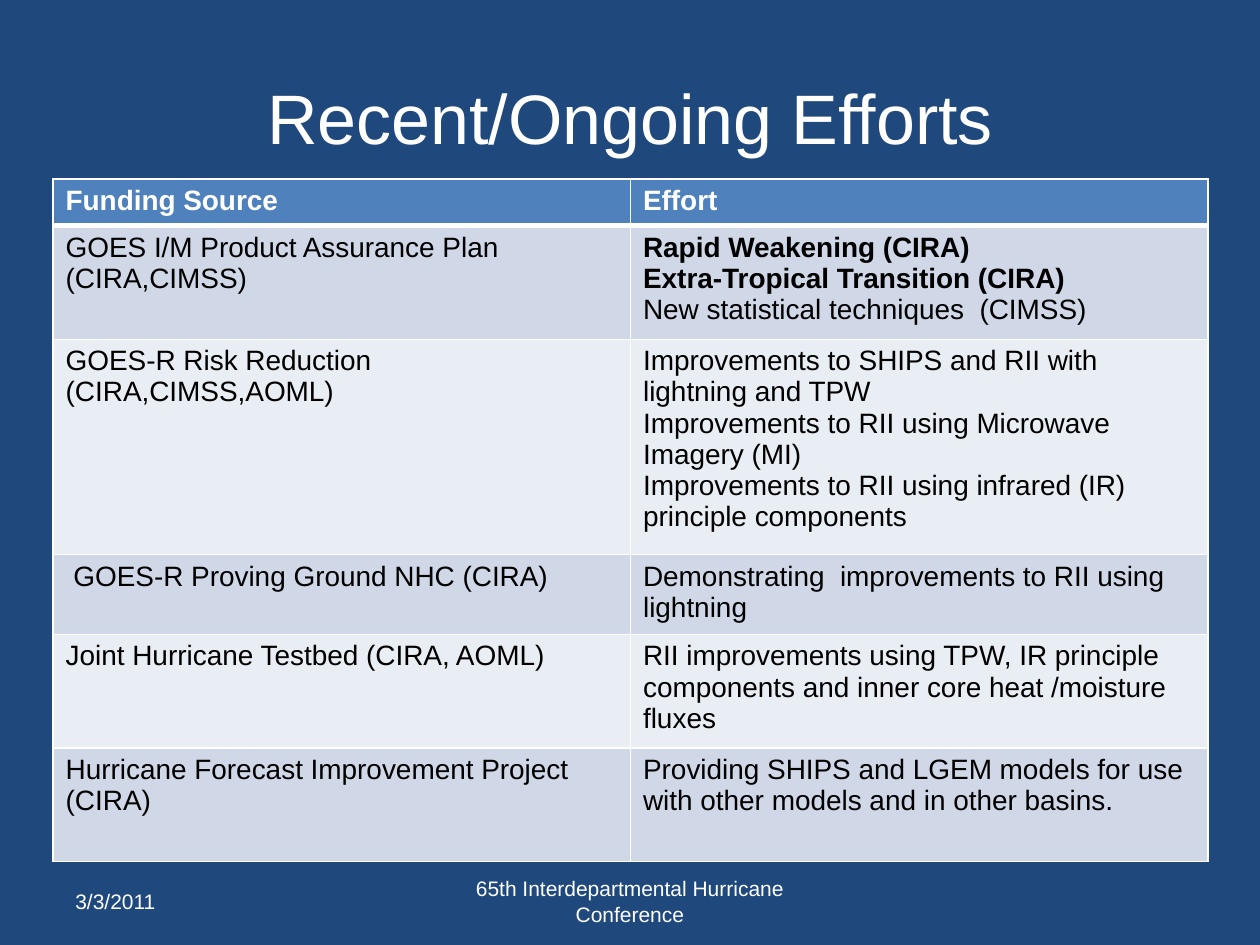
from dataclasses import dataclass

from lxml.etree import SubElement
from pptx import Presentation
from pptx.dml.color import RGBColor as RGB
from pptx.enum.text import MSO_ANCHOR as ANCHOR, PP_ALIGN as ALIGN
from pptx.oxml.ns import qn
from pptx.util import Cm, Pt


@dataclass(frozen=True)
class Theme:
    font: str = "Arial"
    background: str = "1F497D"
    light: str = "FFFFFF"
    dark: str = "000000"
    header: str = "4F81BD"
    bands: tuple = ("D0D8E8", "E9EDF4")
    title_size: int = 40
    table_size: int = 16
    footer_size: int = 12
    border: int = 1
    header_border: int = 3


THEME = Theme()

HEADINGS = ("Funding Source", "Effort")
# Row height in cm, funding source, and efforts as (text, bold)
EFFORTS = [
    (2.29, "GOES I/M Product Assurance Plan (CIRA,CIMSS)", [
        ("Rapid Weakening (CIRA)", True),
        ("Extra-Tropical Transition (CIRA)", True),
        ("New statistical techniques  (CIMSS)", False)]),
    (4.34, "GOES-R Risk Reduction (CIRA,CIMSS,AOML)", [
        ("Improvements to SHIPS and RII with lightning and TPW", False),
        ("Improvements to RII using Microwave Imagery (MI)", False),
        ("Improvements to RII using infrared (IR) principle components", False)]),
    (1.6, " GOES-R Proving Ground NHC (CIRA)", [
        ("Demonstrating  improvements to RII using lightning", False)]),
    (2.29, "Joint Hurricane Testbed (CIRA, AOML)", [
        ("RII improvements using TPW, IR principle components and inner core "
         "heat /moisture fluxes", False)]),
    (2.29, "Hurricane Forecast Improvement Project (CIRA)", [
        ("Providing SHIPS and LGEM models for use with other models and in "
         "other basins.", False)]),
]
HEADER_HEIGHT = 0.94
COLUMN_WIDTH = 11.64


def add_run(p, text, size, color, bold=False):
    r = p.add_run()
    r.text = text
    formats = {"name": THEME.font, "size": Pt(size), "bold": bold}
    for name, value in formats.items():
        setattr(r.font, name, value)
    r.font.color.rgb = RGB.from_string(color)


def add_label(slide, box, text, size, align=ALIGN.LEFT):
    sp = slide.shapes.add_textbox(*(Cm(v) for v in box))
    tf = sp.text_frame
    formats = {"word_wrap": True, "vertical_anchor": ANCHOR.MIDDLE}
    for name, value in formats.items():
        setattr(tf, name, value)
    p = tf.paragraphs[0]
    p.alignment = align
    add_run(p, text, size, THEME.light)


def set_borders(cell, top, bottom):
    """Draw all four edges; the line elements must come before the fill."""
    tcPr = cell._tc.get_or_add_tcPr()
    widths = {"a:lnL": THEME.border, "a:lnR": THEME.border,
              "a:lnT": top, "a:lnB": bottom}
    for tag, width in widths.items():
        ln = SubElement(tcPr, qn(tag), w=str(Pt(width)))
        fill = SubElement(ln, qn("a:solidFill"))
        SubElement(fill, qn("a:srgbClr"), val=THEME.light)


def fill_cell(cell, lines, color, background, top=THEME.border, bottom=THEME.border):
    set_borders(cell, top, bottom)
    cell.fill.solid()
    cell.fill.fore_color.rgb = RGB.from_string(background)
    tf = cell.text_frame
    for i, (text, bold) in enumerate(lines):
        p = tf.add_paragraph() if i else tf.paragraphs[0]
        add_run(p, text, THEME.table_size, color, bold)


def add_efforts_table(slide, left, top):
    heights = [HEADER_HEIGHT] + [height for height, _, _ in EFFORTS]
    table = slide.shapes.add_table(
        len(heights), len(HEADINGS), Cm(left), Cm(top),
        Cm(COLUMN_WIDTH * len(HEADINGS)), Cm(sum(heights))).table
    for column in table.columns:
        column.width = Cm(COLUMN_WIDTH)
    for row, height in zip(table.rows, heights):
        row.height = Cm(height)

    for col, heading in enumerate(HEADINGS):
        fill_cell(table.cell(0, col), [(heading, True)], THEME.light,
                  THEME.header, bottom=THEME.header_border)
    for row, (_, source, efforts) in enumerate(EFFORTS, start=1):
        band = THEME.bands[(row - 1) % 2]
        edge = THEME.header_border if row == 1 else THEME.border
        for col, lines in enumerate(([(source, False)], efforts)):
            fill_cell(table.cell(row, col), lines, THEME.dark, band, top=edge)


def main():
    prs = Presentation()
    prs.slide_width, prs.slide_height = Cm(25.4), Cm(19.05)
    slide = prs.slides.add_slide(prs.slide_layouts[6])
    fill = slide.background.fill
    fill.solid()
    fill.fore_color.rgb = RGB.from_string(THEME.background)

    add_label(slide, (1.27, 0.76, 22.86, 3.18), "Recent/Ongoing Efforts",
              THEME.title_size, ALIGN.CENTER)
    add_efforts_table(slide, 1.07, 3.61)
    add_label(slide, (1.27, 17.66, 5.93, 1.01), "3/3/2011", THEME.footer_size)
    add_label(slide, (8.68, 17.66, 8.04, 1.01),
              "65th Interdepartmental Hurricane Conference",
              THEME.footer_size, ALIGN.CENTER)
    prs.save("out.pptx")


if __name__ == "__main__":
    main()
